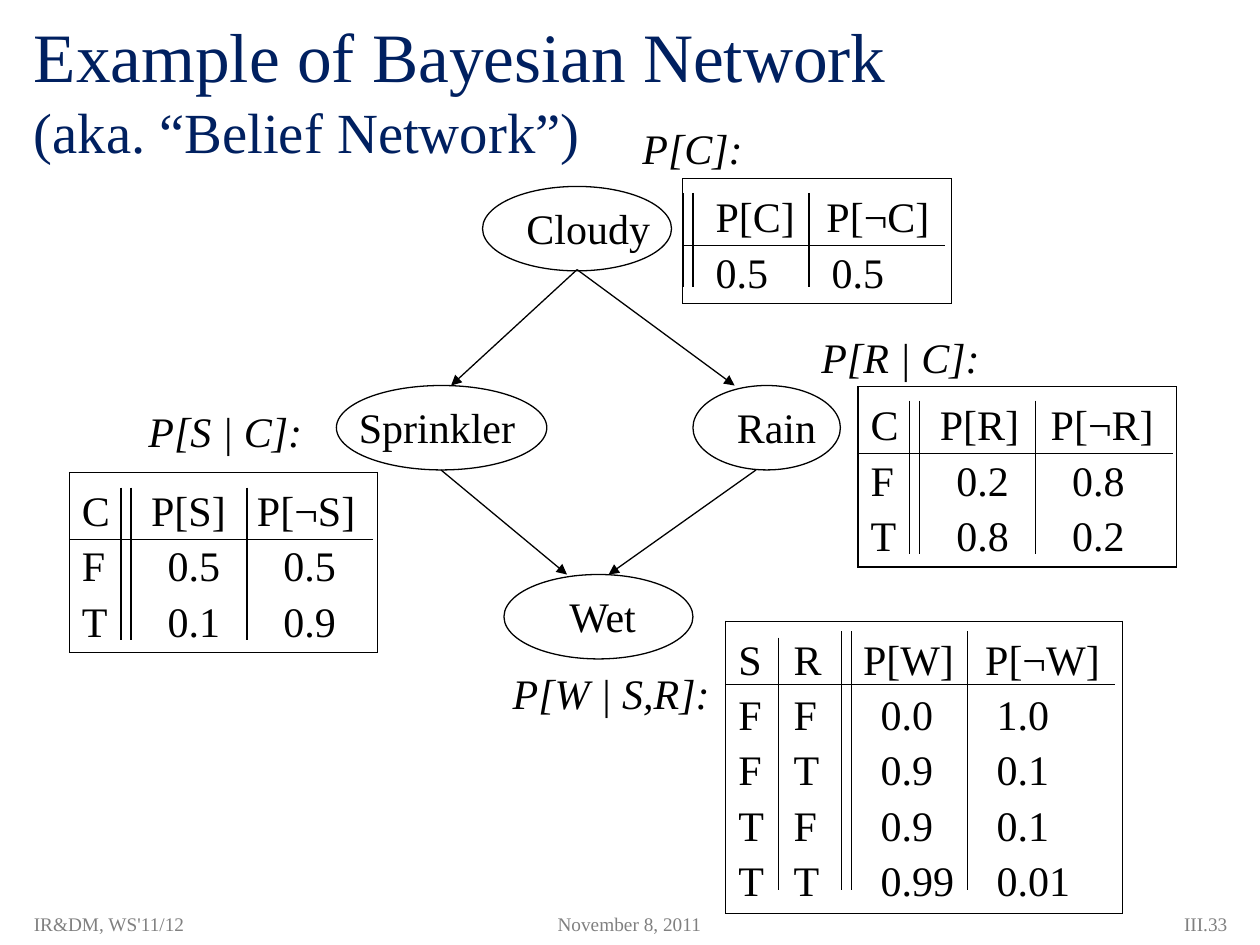
from itertools import accumulate

from lxml import etree
from pptx import Presentation
from pptx.dml.color import RGBColor
from pptx.enum.shapes import MSO_CONNECTOR, MSO_SHAPE
from pptx.enum.text import MSO_ANCHOR, PP_ALIGN
from pptx.oxml.ns import qn
from pptx.util import Inches, Pt

STRAIGHT = MSO_CONNECTOR.STRAIGHT
OVAL = MSO_SHAPE.OVAL
MIDDLE, TOP, BOTTOM = MSO_ANCHOR.MIDDLE, MSO_ANCHOR.TOP, MSO_ANCHOR.BOTTOM
LEFT, CENTER, RIGHT = PP_ALIGN.LEFT, PP_ALIGN.CENTER, PP_ALIGN.RIGHT

COLORS = {"title": "002060", "ink": "000000", "footer": "808080"}
FONT = "Times New Roman"
LINE_WIDTH = Pt(0.75)
BODY_SIZE = 24
HEADER_HEIGHT = 0.53
ROW_HEIGHT = 0.44

NODES = [
    ("Cloudy", (3.83, 1.48, 1.5, 0.67), (0.25, 1.18)),
    ("Sprinkler", (2.67, 3.06, 1.67, 0.67), (0.08, 1.44)),
    ("Rain", (5.5, 3.06, 1.17, 0.67), (0.25, 0.83)),
    ("Wet", (4, 4.56, 1.5, 0.67), (0.42, 0.73)),
]
ARROWS = [
    ((4.58, 2.14), (3.58, 3.06)),
    ((4.58, 2.14), (5.83, 3.06)),
    ((3.5, 3.73), (4.5, 4.56)),
    ((6, 3.73), (4.83, 4.56)),
]
GAP = (0.08, 0, 0)
CHILD_COLUMN = (0.41, 0.1, 0.1)

# fmt: off
PROBABILITY_TABLES = [
    {"caption": "P[C]:", "caption_box": (5, 0.92, 1.01, 0.5),
     "box": (5.42, 1.42, 2.13, 0.99), "header_rule": (0.53, 2.08),
     "rule_tops": [0.11] * 3, "rule_bottom": 0.86,
     "columns": [(0, 0, 0), GAP, (0.92, 0.18, 0.18), (1.13, 0.14, 0.18)],
     "rows": [["", "P[C]", "P[¬C]"], ["", "0.5", "0.5"]]},
    {"caption": "P[R | C]:", "caption_box": (6.42, 2.58, 1.47, 0.5),
     "box": (6.81, 3.07, 2.53, 1.43), "header_rule": (0.53, 2.5),
     "rule_tops": [0.11] * 3, "rule_bottom": 1.33,
     "columns": [CHILD_COLUMN, GAP, (0.92, 0.16, 0.29), (1.12, 0.12, 0.29)],
     "rows": [["C", "", "P[R]", "P[¬R]"], ["F", "", "0.2", "0.8"], ["T", "", "0.8", "0.2"]]},
    {"caption": "P[S | C]:", "caption_box": (1.08, 3.17, 1.44, 0.5),
     "box": (0.55, 3.75, 2.45, 1.43), "header_rule": (0.53, 2.41),
     "rule_tops": [0.12] * 3, "rule_bottom": 1.33,
     "columns": [CHILD_COLUMN, GAP, (0.92, 0.16, 0.29), (1.04, 0.08, 0.29)],
     "rows": [["C", "", "P[S]", "P[¬S]"], ["F", "", "0.5", "0.5"], ["T", "", "0.1", "0.9"]]},
    {"caption": "P[W | S,R]:", "caption_box": (3.97, 5.25, 1.78, 0.5),
     "box": (5.76, 4.93, 3.15, 2.32), "header_rule": (0.5, 3.09),
     "rule_tops": [0.13, 0.08, 0.08, 0.08], "rule_bottom": 2.13,
     "columns": [(0.42, 0.1, 0.1), (0.5, 0.12, 0.12), GAP, (0.92, 0.09, 0.23), (1.23, 0.14, 0.23)],
     "rows": [["S", "R", "", "P[W]", "P[¬W]"],
              ["F", "F", "", "0.0", "1.0"], ["F", "T", "", "0.9", "0.1"],
              ["T", "F", "", "0.9", "0.1"], ["T", "T", "", "0.99", "0.01"]]},
]
# fmt: on


def color(name):
    return RGBColor.from_string(COLORS[name])


def style_font(font, size, color_name):
    font.name = FONT
    font.size = Pt(size)
    font.color.rgb = color(color_name)


def add_text(slide, box, text, size=BODY_SIZE, color_name="ink", align=LEFT,
             anchor=TOP, wrap=False, italic=False):
    frame = slide.shapes.add_textbox(*map(Inches, box)).text_frame
    frame.word_wrap = wrap
    frame.vertical_anchor = anchor
    paragraph = frame.paragraphs[0]
    paragraph.text = text
    paragraph.alignment = align
    style_font(paragraph.font, size, color_name)
    paragraph.font.italic = italic
    return paragraph


def add_title(slide, box):
    paragraph = add_text(slide, box, "Example of Bayesian Network", 39.6, "title",
                         anchor=MIDDLE, wrap=True)
    paragraph.add_line_break()
    subtitle = paragraph.add_run()
    subtitle.text = "(aka. “Belief Network”)"
    subtitle.font.size = Pt(32.4)


def add_node(slide, box, text, label_offset, label_width):
    left, top = box[:2]
    shape = slide.shapes.add_shape(OVAL, *map(Inches, box))
    shape.shadow.inherit = False
    shape.fill.background()
    shape.line.color.rgb = color("ink")
    shape.line.width = LINE_WIDTH
    add_text(slide, (left + label_offset, top + 0.08, label_width, 0.5), text)


def add_line(slide, start, end, arrow=False):
    connector = slide.shapes.add_connector(STRAIGHT, *map(Inches, start + end))
    connector.line.color.rgb = color("ink")
    connector.line.width = LINE_WIDTH
    if arrow:
        properties = connector.line._get_or_add_ln()
        etree.SubElement(properties, qn("a:tailEnd"), type="triangle")
    etree.SubElement(connector._element.spPr, qn("a:effectLst"))


def set_borders(cell, visible):
    properties = cell._tc.get_or_add_tcPr()
    for side in "LRTB":
        border = etree.SubElement(properties, qn(f"a:ln{side}"), w=str(LINE_WIDTH))
        if side in visible:
            fill = etree.SubElement(border, qn("a:solidFill"))
            etree.SubElement(fill, qn("a:srgbClr"), val=COLORS["ink"])
        else:
            etree.SubElement(border, qn("a:noFill"))


def outer_sides(row, column, last_row, last_column):
    edges = {"L": column == 0, "R": column == last_column, "T": row == 0, "B": row == last_row}
    return [side for side, is_outer in edges.items() if is_outer]


def add_rules(slide, box, columns, header_rule, rule_tops, rule_bottom):
    left, top = box[:2]
    offset, length = header_rule
    add_line(slide, (left, top + offset), (left + length, top + offset))
    column_edges = accumulate(width for width, _, _ in columns)
    for edge, rule_top in zip(column_edges, rule_tops):
        add_line(slide, (left + edge, top + rule_top), (left + edge, top + rule_bottom))


def add_probability_table(slide, caption, caption_box, box, columns, rows, **rules):
    add_text(slide, caption_box, caption, italic=True)
    add_rules(slide, box, columns, **rules)
    cell_columns = [column for column in columns if column[0]]
    last_row, last_column = len(rows) - 1, len(cell_columns) - 1
    slack = box[3] - HEADER_HEIGHT - ROW_HEIGHT * last_row
    table = slide.shapes.add_table(len(rows), len(cell_columns), *map(Inches, box)).table
    table.first_row = False
    table.horz_banding = False
    for column, (width, _, _) in zip(table.columns, cell_columns):
        column.width = Inches(width)
    for row_index, values in enumerate(rows):
        is_header = row_index == 0
        extra = slack if row_index == last_row else 0
        table.rows[row_index].height = Inches((HEADER_HEIGHT if is_header else ROW_HEIGHT) + extra)
        for column_index, text in enumerate(values):
            _, header_indent, body_indent = cell_columns[column_index]
            cell = table.cell(row_index, column_index)
            set_borders(cell, outer_sides(row_index, column_index, last_row, last_column))
            cell.fill.background()
            cell.margin_left = Inches(header_indent if is_header else body_indent)
            cell.margin_right = cell.margin_top = 0
            cell.margin_bottom = Inches(0.03 + extra)
            cell.vertical_anchor = BOTTOM
            paragraph = cell.text_frame.paragraphs[0]
            paragraph.text = text
            style_font(paragraph.font, BODY_SIZE, "ink")


def add_footer(slide, top, height):
    for text, left, width, align in [
        ("IR&DM, WS'11/12", 0.17, 3, LEFT),
        ("November 8, 2011", 3.83, 2.33, CENTER),
        ("III.33", 7.67, 2.17, RIGHT),
    ]:
        add_text(slide, (left, top, width, height), text, 11, "footer", align, MIDDLE, True)


def main():
    presentation = Presentation()
    presentation.slide_width = Inches(10)
    presentation.slide_height = Inches(7.5)
    slide = presentation.slides.add_slide(presentation.slide_layouts[6])
    add_title(slide, (0.17, 0.33, 9.67, 0.75))
    for text, box, label in NODES:
        add_node(slide, box, text, *label)
    for start, end in ARROWS:
        add_line(slide, start, end, arrow=True)
    for probability_table in PROBABILITY_TABLES:
        add_probability_table(slide, **probability_table)
    add_footer(slide, 7.17, 0.33)
    presentation.save("out.pptx")


if __name__ == "__main__":
    main()
